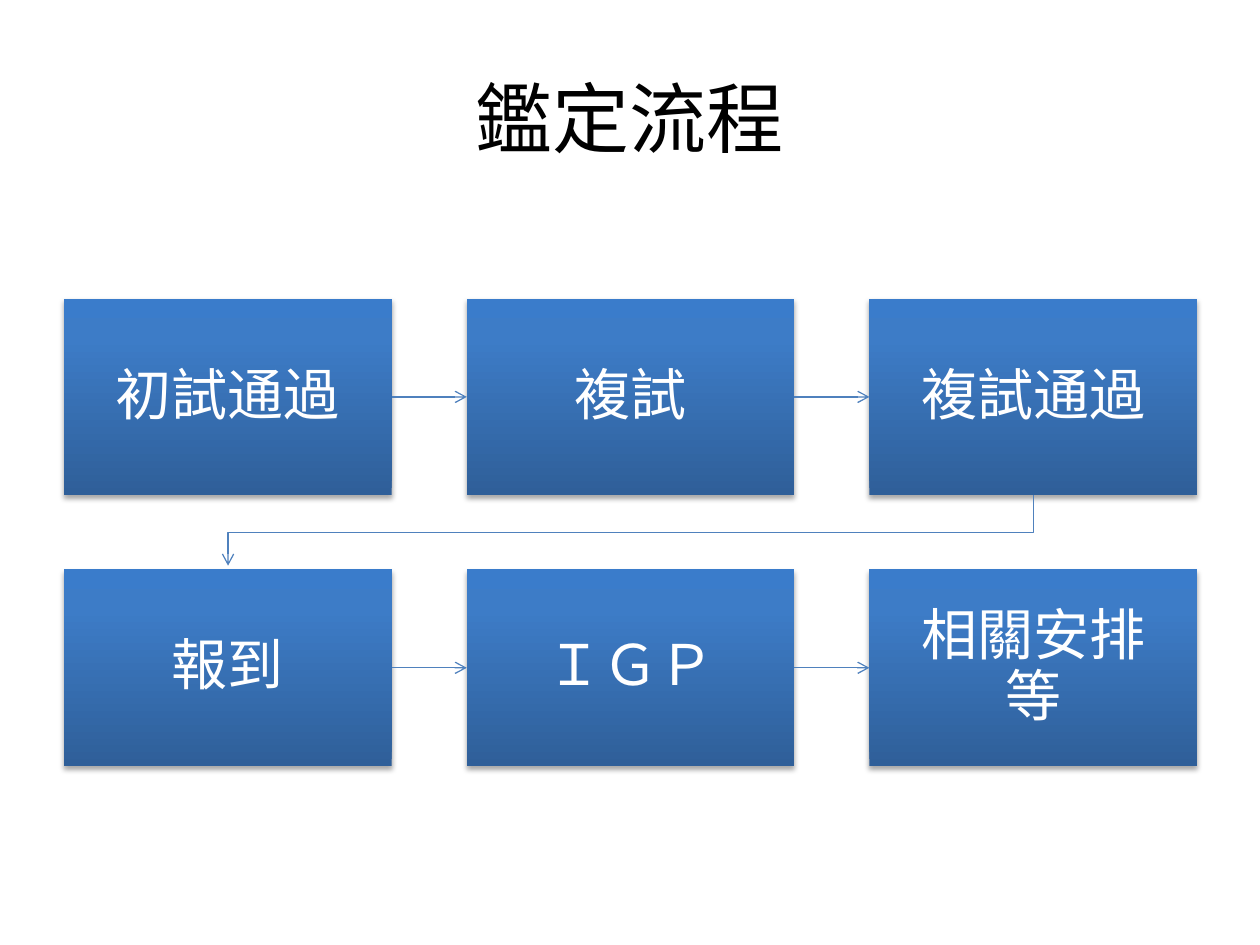
from copy import deepcopy
from dataclasses import dataclass

from lxml import etree
from pptx import Presentation
from pptx import util as u
from pptx.dml.color import RGBColor
from pptx.enum import shapes, text
from pptx.oxml import ns

TITLE = "鑑定流程"
STEPS = [
    ["初試通過", "複試", "複試通過"],
    ["報到", "ＩＧＰ", "相關安排等"],
]


@dataclass(frozen=True)
class Theme:
    font: str = "Calibri"
    title_size: int = 44
    step_size: int = 32
    title_color: str = "000000"
    step_color: str = "FFFFFF"
    line_color: str = "4F81BD"
    line_width: float = 0.75
    shadow_color: str = "000000"
    gradient: tuple = ((0, "2F5F99"), (0.8, "3D7CC7"), (1, "3A7CCB"))


THEME = Theme()
WIDTH, HEIGHT = u.Inches(10), u.Inches(7.5)
TITLE_BOX = [u.Inches(n) for n in (0.5, 0.3, 9, 1.25)]
GRID_LEFT, GRID_TOP = u.Inches(0.51), u.Inches(2.37)
STEP_WIDTH, STEP_HEIGHT = u.Inches(2.6), u.Inches(1.56)
COLUMN_PITCH, ROW_PITCH = u.Inches(3.195), u.Inches(2.15)
INSET = u.Inches(0.25)
ARROW_GAP = u.Inches(0.03)


def write(shape, wording, size, color):
    frame = shape.text_frame
    frame.word_wrap = True
    frame.vertical_anchor = text.MSO_ANCHOR.MIDDLE
    paragraph = frame.paragraphs[0]
    paragraph.alignment = text.PP_ALIGN.CENTER
    run = paragraph.add_run()
    run.text = wording
    run.font.name = THEME.font
    run.font.size = u.Pt(size)
    run.font.color.rgb = RGBColor.from_string(color)
    return frame


def fill_gradient(shape):
    shape.fill.gradient()
    shape.fill.gradient_angle = 90
    stop_list = shape.element.spPr.find(".//" + ns.qn("a:gsLst"))
    stop_list.append(deepcopy(stop_list[0]))
    for stop, (position, color) in zip(shape.fill.gradient_stops, THEME.gradient):
        stop.position = position
        stop.color.rgb = RGBColor.from_string(color)


def add_shadow(shape):
    shape.shadow.inherit = False
    effects = shape.element.spPr.find(ns.qn("a:effectLst"))
    shadow = etree.SubElement(
        effects, ns.qn("a:outerShdw"), blurRad=str(u.Pt(3.1)),
        dist=str(u.Pt(1.8)), dir="5400000", rotWithShape="0")
    color = etree.SubElement(shadow, ns.qn("a:srgbClr"), val=THEME.shadow_color)
    etree.SubElement(color, ns.qn("a:alpha"), val="35000")


def add_step(slide, row, column, wording):
    shape = slide.shapes.add_shape(
        shapes.MSO_SHAPE.RECTANGLE,
        GRID_LEFT + column * COLUMN_PITCH, GRID_TOP + row * ROW_PITCH,
        STEP_WIDTH, STEP_HEIGHT)
    fill_gradient(shape)
    shape.line.fill.background()
    add_shadow(shape)
    frame = write(shape, wording, THEME.step_size, THEME.step_color)
    frame.margin_left = frame.margin_right = INSET
    frame.margin_top = frame.margin_bottom = INSET
    frame.paragraphs[0].line_spacing = 0.9
    return shape


def style_arrow(arrow):
    arrow.line.color.rgb = RGBColor.from_string(THEME.line_color)
    arrow.line.width = u.Pt(THEME.line_width)
    etree.SubElement(arrow.line._get_or_add_ln(), ns.qn("a:tailEnd"), type="arrow")


def join_steps(slide, start, end):
    arrow = slide.shapes.add_connector(shapes.MSO_CONNECTOR.STRAIGHT, 0, 0, 0, 0)
    arrow.begin_connect(start, 3)
    arrow.end_connect(end, 1)
    style_arrow(arrow)
    etree.SubElement(arrow.element.spPr, ns.qn("a:effectLst"))


def join_rows(slide, start, end):
    start_x, end_x = (step.left + step.width // 2 for step in (start, end))
    bottom = start.top + start.height
    middle = (bottom + end.top) // 2
    builder = slide.shapes.build_freeform(start_x, bottom)
    builder.add_line_segments(
        [(start_x, middle), (end_x, middle), (end_x, end.top - ARROW_GAP)],
        close=False)
    arrow = builder.convert_to_shape()
    arrow.fill.background()
    arrow.shadow.inherit = False
    style_arrow(arrow)


def main():
    presentation = Presentation()
    presentation.slide_width, presentation.slide_height = WIDTH, HEIGHT
    slide = presentation.slides.add_slide(presentation.slide_layouts[6])
    write(slide.shapes.add_textbox(*TITLE_BOX), TITLE,
          THEME.title_size, THEME.title_color)
    rows = [
        [add_step(slide, row, column, wording)
         for column, wording in enumerate(wordings)]
        for row, wordings in enumerate(STEPS)
    ]
    for steps in rows:
        for start, end in zip(steps, steps[1:]):
            join_steps(slide, start, end)
    for upper, lower in zip(rows, rows[1:]):
        join_rows(slide, upper[-1], lower[0])
    presentation.save("out.pptx")


if __name__ == "__main__":
    main()
